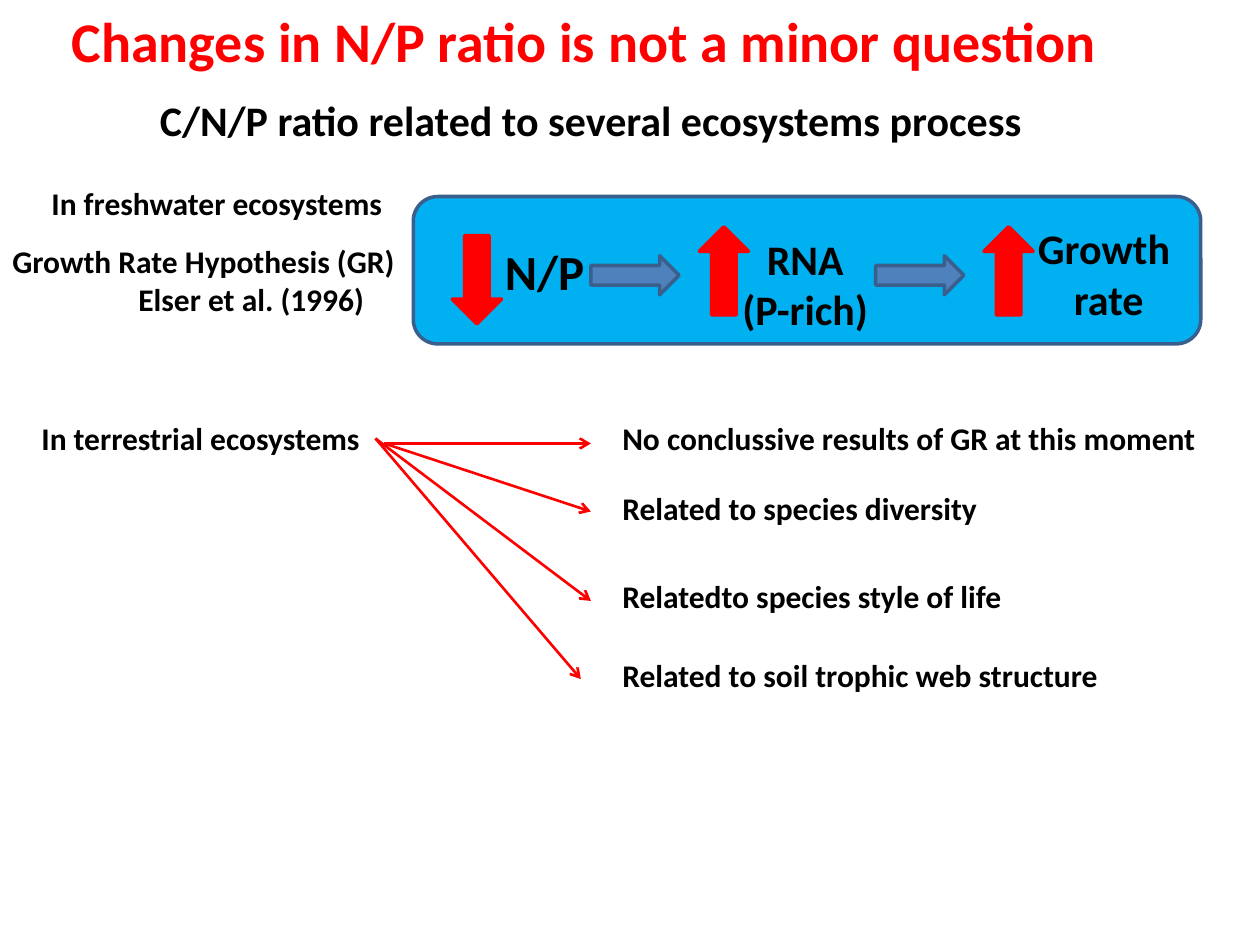
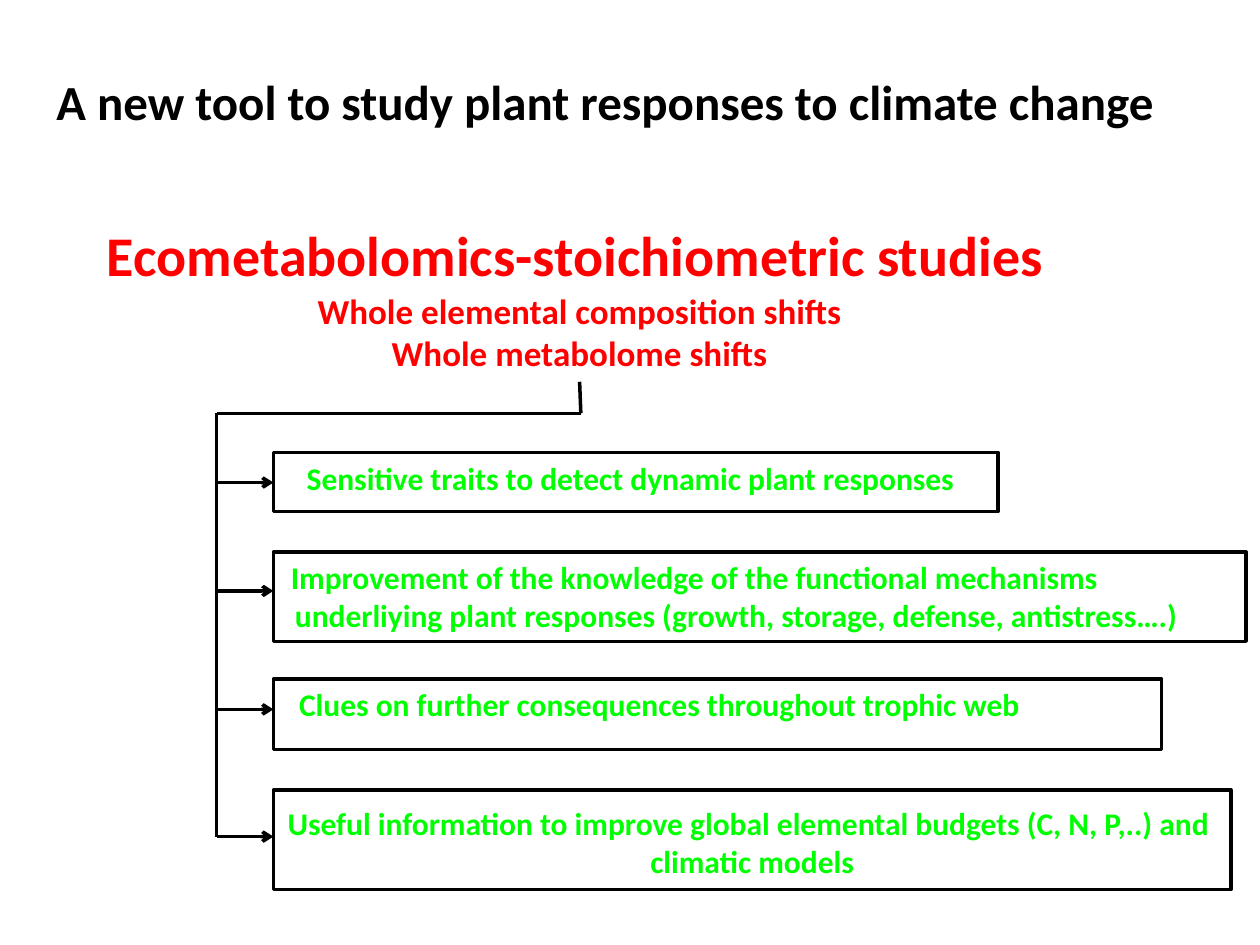
from dataclasses import dataclass
from typing import NamedTuple

from lxml.etree import SubElement
from pptx import Presentation
from pptx.dml.color import RGBColor
from pptx.enum.shapes import MSO_CONNECTOR, MSO_SHAPE
from pptx.enum.text import PP_ALIGN
from pptx.oxml.ns import qn
from pptx.slide import Slide
from pptx.util import Inches, Pt


@dataclass(frozen=True)
class Theme:
    font: str = "Calibri"
    black: RGBColor = RGBColor(0, 0, 0)
    red: RGBColor = RGBColor(255, 0, 0)
    green: RGBColor = RGBColor(0, 255, 0)
    sky: RGBColor = RGBColor(0, 176, 240)
    blue: RGBColor = RGBColor(79, 129, 189)
    outline: RGBColor = RGBColor(58, 95, 140)
    title: int = 32
    heading: int = 28
    subtitle: int = 24
    caption: int = 20
    body: int = 18
    thin: float = 1.5
    thick: float = 2


THEME = Theme()


class Box(NamedTuple):
    left: float
    top: float
    width: float
    height: float


class Point(NamedTuple):
    x: float
    y: float


@dataclass(frozen=True)
class Label:
    box: Box
    lines: tuple[str, ...]
    size: int = THEME.body
    color: RGBColor = THEME.black
    centered: bool = False
    last_indent: float = 0


@dataclass(frozen=True)
class Figure:
    kind: MSO_SHAPE
    box: Box
    fill: RGBColor | None
    outline: RGBColor


@dataclass(frozen=True)
class Benefit:
    frame: Box
    text: Box
    arrow_y: float
    lines: tuple[str, ...]
    last_indent: float = 0


def draw_label(slide: Slide, label: Label) -> None:
    shape = slide.shapes.add_textbox(*map(Inches, label.box))
    frame = shape.text_frame
    frame.word_wrap = True
    frame.text = "\n".join(label.lines)
    for paragraph in frame.paragraphs:
        paragraph.alignment = PP_ALIGN.CENTER if label.centered else PP_ALIGN.LEFT
        font = paragraph.font
        font.name = THEME.font
        font.size = Pt(label.size)
        font.bold = True
        font.color.rgb = label.color
    if label.last_indent:
        properties = frame.paragraphs[-1]._p.get_or_add_pPr()
        properties.set("marL", str(Inches(label.last_indent)))


def draw_figure(slide: Slide, figure: Figure) -> None:
    shape = slide.shapes.add_shape(figure.kind, *map(Inches, figure.box))
    shape.shadow.inherit = False
    if figure.fill is None:
        shape.fill.background()
    else:
        shape.fill.solid()
        shape.fill.fore_color.rgb = figure.fill
    shape.line.color.rgb = figure.outline
    shape.line.width = Pt(THEME.thick)


def draw_line(slide: Slide, start: Point, end: Point, color: RGBColor,
              width: float, arrow: bool = False) -> None:
    connector = slide.shapes.add_connector(
        MSO_CONNECTOR.STRAIGHT, *map(Inches, (*start, *end)))
    connector.line.color.rgb = color
    connector.line.width = Pt(width)
    if arrow:
        SubElement(connector.line._get_or_add_ln(), qn("a:tailEnd"), type="arrow")
    SubElement(connector._element.spPr, qn("a:effectLst"))


RATIO_LABELS = (
    Label(Box(0.47, 0, 8.6, 0.64), ("Changes in N/P ratio is not a minor question",),
          THEME.title, THEME.red),
    Label(Box(1.17, 0.7, 7.4, 0.5),
          ("C/N/P ratio related to several ecosystems process",), THEME.subtitle),
    Label(Box(0.31, 1.41, 2.96, 0.4), ("In freshwater ecosystems",)),
    Label(Box(0, 1.87, 3.4, 0.71),
          ("Growth Rate Hypothesis (GR)", "Elser et al. (1996)"), last_indent=1),
    Label(Box(3.91, 1.87, 1.07, 0.57), ("N/P",), THEME.heading),
    Label(Box(5.78, 1.8, 1.22, 0.91), ("RNA", "(P-rich)"), THEME.subtitle,
          centered=True),
    Label(Box(8.13, 1.72, 1.34, 0.91), ("Growth ", "rate"), THEME.subtitle,
          centered=True),
    Label(Box(0.23, 3.28, 2.85, 0.4), ("In terrestrial ecosystems",)),
)

GROWTH_PANEL = Figure(MSO_SHAPE.ROUNDED_RECTANGLE, Box(3.28, 1.56, 6.25, 1.17),
                      THEME.sky, THEME.outline)
TREND_ARROWS = (
    (MSO_SHAPE.DOWN_ARROW, Point(3.59, 1.87)),
    (MSO_SHAPE.UP_ARROW, Point(5.55, 1.8)),
    (MSO_SHAPE.UP_ARROW, Point(7.81, 1.8)),
)
STEP_LEFTS = (4.69, 6.95)

UPPER_ORIGIN = Point(3.05, 3.52)
LOWER_ORIGIN = Point(2.98, 3.48)
FINDINGS = (
    ("No conclussive results of GR at this moment", 3.28, UPPER_ORIGIN, Point(4.69, 3.52)),
    ("Related to species diversity", 3.83, UPPER_ORIGIN, Point(4.69, 4.06)),
    ("Relatedto species style of life", 4.53, LOWER_ORIGIN, Point(4.69, 4.77)),
    ("Related to soil trophic web structure", 5.16, LOWER_ORIGIN, Point(4.61, 5.39)),
)

TOOL_LABELS = (
    Label(Box(0.35, 0.52, 9.2, 0.57),
          ("A new tool to study plant responses to climate change",), THEME.heading),
    Label(Box(0.75, 1.7, 7.9, 0.64), ("Ecometabolomics-stoichiometric studies",),
          THEME.title, THEME.red),
    Label(Box(2.3, 2.25, 4.6, 0.77),
          ("Whole elemental composition shifts", "Whole metabolome shifts"),
          THEME.caption, THEME.red, centered=True),
)

BENEFITS = (
    Benefit(Box(2.17, 3.59, 5.75, 0.47), Box(1.54, 3.59, 6.93, 0.4), 3.83,
            ("Sensitive traits to detect dynamic plant responses",)),
    Benefit(Box(2.17, 4.38, 7.72, 0.71), Box(1.25, 4.38, 8.58, 0.71), 4.69,
            ("Improvement of the knowledge of the functional mechanisms ",
             "underliying plant responses (growth, storage, defense, antistress….)"),
            last_indent=0.61),
    Benefit(Box(2.17, 5.39, 7.05, 0.56), Box(1.64, 5.39, 7.19, 0.4), 5.63,
            ("Clues on further consequences throughout trophic web",)),
    Benefit(Box(2.17, 6.27, 7.6, 0.79), Box(1.56, 6.33, 8.82, 0.71), 6.64,
            ("Useful information to improve global elemental budgets (C, N, P,..) and ",
             "climatic models")),
)
TRUNK_X = 1.72
STEM = (Point(4.6, 3.03), Point(4.61, 3.28), Point(TRUNK_X, 3.28),
        Point(TRUNK_X, BENEFITS[-1].arrow_y))


def build_ratio_slide(slide: Slide) -> None:
    draw_figure(slide, GROWTH_PANEL)
    for left in STEP_LEFTS:
        draw_figure(slide, Figure(MSO_SHAPE.RIGHT_ARROW, Box(left, 2.03, 0.7, 0.31),
                                  THEME.blue, THEME.outline))
    for kind, corner in TREND_ARROWS:
        draw_figure(slide, Figure(kind, Box(*corner, 0.39, 0.7), THEME.red, THEME.red))
    for label in RATIO_LABELS:
        draw_label(slide, label)
    for text, top, start, end in FINDINGS:
        draw_line(slide, start, end, THEME.red, THEME.thin, arrow=True)
        draw_label(slide, Label(Box(4.84, top, 4.95, 0.4), (text,)))


def build_tool_slide(slide: Slide) -> None:
    for label in TOOL_LABELS:
        draw_label(slide, label)
    for start, end in zip(STEM, STEM[1:]):
        draw_line(slide, start, end, THEME.black, THEME.thick)
    for benefit in BENEFITS:
        draw_figure(slide, Figure(MSO_SHAPE.RECTANGLE, benefit.frame, None, THEME.black))
        draw_label(slide, Label(benefit.text, benefit.lines, color=THEME.green,
                                centered=True, last_indent=benefit.last_indent))
        draw_line(slide, Point(TRUNK_X, benefit.arrow_y),
                  Point(benefit.frame.left, benefit.arrow_y),
                  THEME.black, THEME.thick, arrow=True)


def main() -> None:
    presentation = Presentation()
    presentation.slide_width = Inches(10)
    presentation.slide_height = Inches(7.5)
    blank = presentation.slide_layouts[6]
    for build in (build_ratio_slide, build_tool_slide):
        build(presentation.slides.add_slide(blank))
    presentation.save("out.pptx")


if __name__ == "__main__":
    main()
